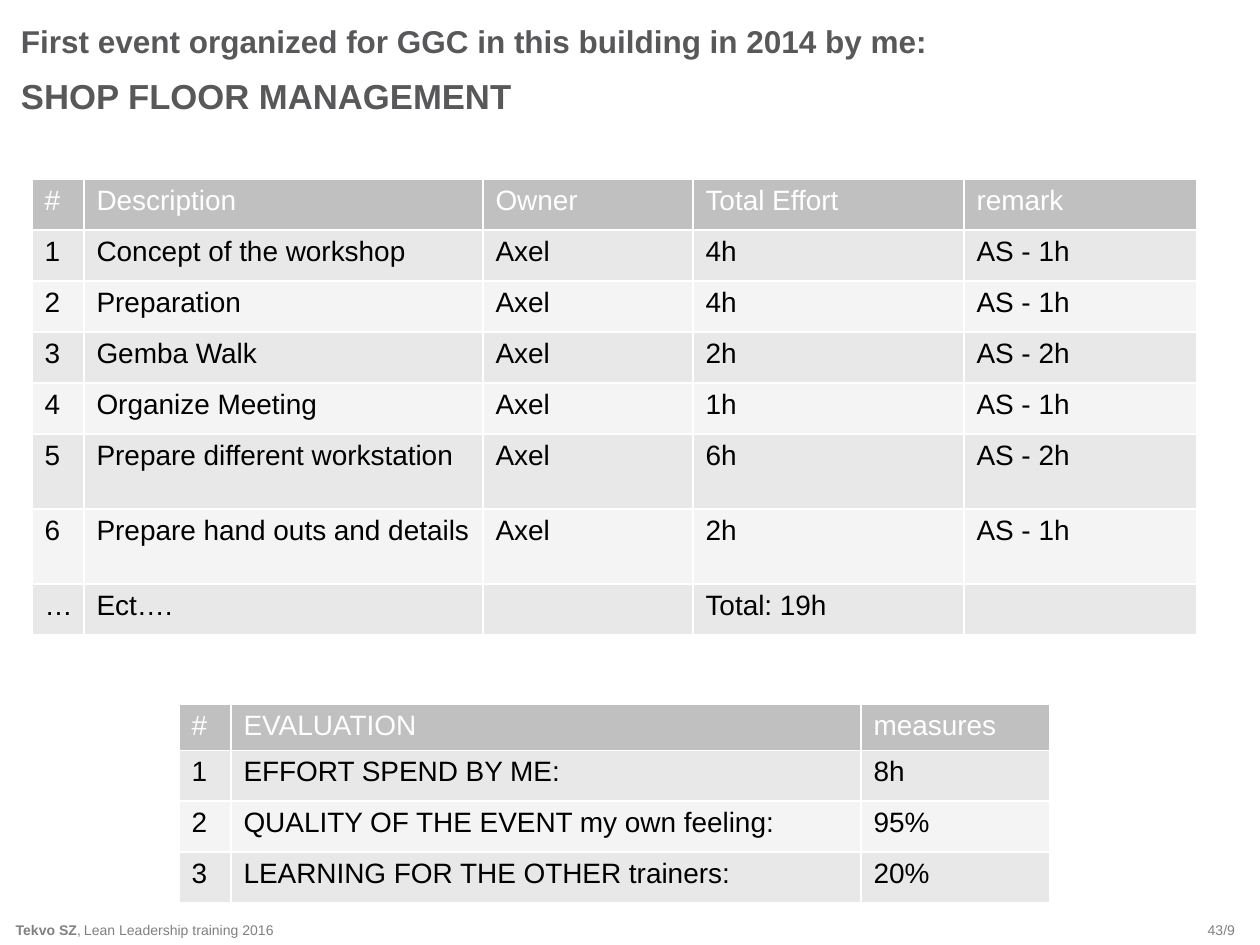
import pptx
import pptx.dml.color
import pptx.enum.text
import pptx.oxml
import pptx.oxml.ns
import pptx.util

PX_PER_INCH = 126
ALIGN = pptx.enum.text.PP_ALIGN
HEADER_FILL = "C0C0C0"
BAND_FILLS = ("E8E8E8", "F4F4F4")
FOOTER_GREY = "808080"
ROW_HEIGHT = 51
TALL_ROW_HEIGHT = 75


def px(length):
    return round(length * 914400 / PX_PER_INCH)


def color(hex_code):
    return pptx.dml.color.RGBColor.from_string(hex_code)


def set_font(font, size, hex_code, bold=False):
    font.name = "Arial"
    font.size = pptx.util.Pt(size)
    font.bold = bold
    font.color.rgb = color(hex_code)


def add_text_frame(slide, left, top, width, height, margin_left=0, margin_right=0):
    box = slide.shapes.add_textbox(px(left), px(top), px(width), px(height))
    frame = box.text_frame
    frame.word_wrap = True
    frame.vertical_anchor = pptx.enum.text.MSO_ANCHOR.MIDDLE
    frame.margin_left, frame.margin_right = px(margin_left), px(margin_right)
    frame.margin_top = frame.margin_bottom = 0
    return frame


def add_title(slide, left, top, width, height):
    frame = add_text_frame(slide, left, top, width, height)
    event = frame.paragraphs[0]
    event.text = "First event organized for GGC in this building in 2014 by me:"
    set_font(event.font, 18, "58585A", bold=True)
    topic = frame.add_paragraph()
    topic.text = "SHOP FLOOR MANAGEMENT"
    topic.space_before = pptx.util.Pt(16)
    set_font(topic.font, 19.8, "58585A", bold=True)
    for line in (event, topic):
        line.line_spacing = pptx.util.Pt(16)


def add_footer(slide, left, top, width, height):
    company_width, page_width = 84, 95
    company = add_text_frame(slide, left, top, company_width, height, 5, 3).paragraphs[0]
    company.alignment = ALIGN.RIGHT
    for text, bold in (("Tekvo SZ", True), (",", False)):
        run = company.add_run()
        run.text = text
        set_font(run.font, 8, FOOTER_GREY, bold)

    training = add_text_frame(slide, left + company_width, top, 1029, height).paragraphs[0]
    training.text = "Lean Leadership training 2016"
    page = add_text_frame(slide, left + width - page_width, top, page_width, height,
                          margin_right=25).paragraphs[0]
    page.text = "43/9"
    page.alignment = ALIGN.RIGHT
    for paragraph in (training, page):
        set_font(paragraph.font, 8, FOOTER_GREY)


def add_white_borders(cell):
    properties = cell._tc.get_or_add_tcPr()
    for side in ("lnL", "lnR", "lnT", "lnB"):
        properties.append(pptx.oxml.parse_xml(
            f'<a:{side} {pptx.oxml.ns.nsdecls("a")} w="12700"><a:solidFill>'
            f'<a:srgbClr val="FFFFFF"/></a:solidFill></a:{side}>'))


def add_banded_table(slide, left, top, column_widths, row_heights, rows):
    """Place a table with a grey header above alternating row fills."""
    table = slide.shapes.add_table(
        len(rows), len(column_widths), px(left), px(top),
        px(sum(column_widths)), px(sum(row_heights))).table
    for column, width in zip(table.columns, column_widths):
        column.width = px(width)
    for index, (row, height, texts) in enumerate(zip(table.rows, row_heights, rows)):
        row.height = px(height)
        is_header = index == 0
        for cell, text in zip(row.cells, texts):
            add_white_borders(cell)
            cell.fill.solid()
            cell.fill.fore_color.rgb = color(
                HEADER_FILL if is_header else BAND_FILLS[(index - 1) % 2])
            paragraph = cell.text_frame.paragraphs[0]
            paragraph.text = text
            set_font(paragraph.font, 16, "FFFFFF" if is_header else "000000")


def add_effort_table(slide, left, top):
    tasks = [
        ("Concept of the workshop", 4, 1),
        ("Preparation", 4, 1),
        ("Gemba Walk", 2, 2),
        ("Organize Meeting", 1, 1),
        ("Prepare different workstation", 6, 2),
        ("Prepare hand outs and details", 2, 1),
    ]
    total = sum(effort for _, effort, _ in tasks)
    rows = [("#", "Description", "Owner", "Total Effort", "remark")]
    rows += [(str(number), task, "Axel", f"{effort}h", f"AS - {own}h")
             for number, (task, effort, own) in enumerate(tasks, 1)]
    rows.append(("…", "Ect….", "", f"Total: {total}h", ""))
    heights = [ROW_HEIGHT] * 5 + [TALL_ROW_HEIGHT] * 2 + [ROW_HEIGHT]
    add_banded_table(slide, left, top, (52, 399, 210, 271, 233), heights, rows)


def add_evaluation_table(slide, left, top):
    rows = [
        ("#", "EVALUATION", "measures"),
        ("1", "EFFORT SPEND BY ME:", "8h"),
        ("2", "QUALITY OF THE EVENT my own feeling:", "95%"),
        ("3", "LEARNING FOR THE OTHER trainers:", "20%"),
    ]
    add_banded_table(slide, left, top, (52, 630, 189), [44] + [ROW_HEIGHT] * 3, rows)


def main():
    presentation = pptx.Presentation()
    presentation.slide_width, presentation.slide_height = px(1260), px(945)
    slide = presentation.slides.add_slide(presentation.slide_layouts[6])
    add_footer(slide, 0, 914, 1260, 31)
    add_title(slide, 21, 53, 1040, 42)
    add_effort_table(slide, 32, 179)
    add_evaluation_table(slide, 179, 704)
    presentation.save("out.pptx")


if __name__ == "__main__":
    main()
